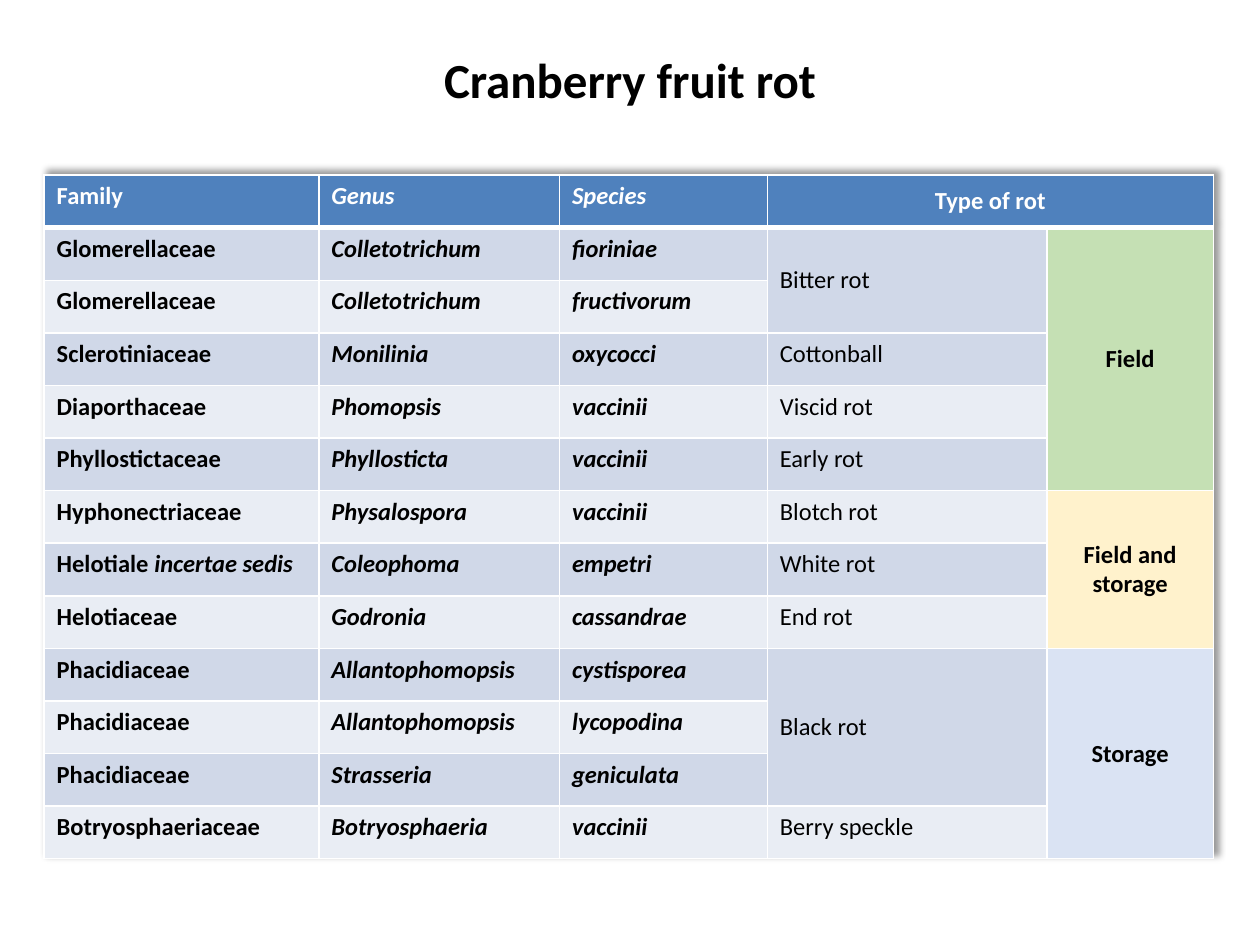
from dataclasses import dataclass

from lxml import etree
from pptx import Presentation
from pptx.dml.color import RGBColor
from pptx.enum.text import MSO_ANCHOR, PP_ALIGN
from pptx.oxml.ns import qn
from pptx.util import Inches, Pt

CENTER, LEFT = PP_ALIGN.CENTER, PP_ALIGN.LEFT
TOP, MIDDLE = MSO_ANCHOR.TOP, MSO_ANCHOR.MIDDLE


@dataclass(frozen=True)
class Theme:
    font: str = "Calibri"
    title_size: int = 28
    table_size: int = 14
    text: str = "000000"
    header_text: str = "FFFFFF"
    header_fill: str = "4F81BD"
    bands: tuple = ("D0D8E8", "E9EDF4")
    border: str = "FFFFFF"
    thin: int = 1
    thick: int = 3


THEME = Theme()
COLUMN_WIDTHS = (2.18, 1.91, 1.65, 2.22, 1.32)
TABLE_HEIGHT = 5.43
HEADERS = ("Family", "Genus", "Species", "Type of rot")
ROT_COLUMN, STAGE_COLUMN = 3, 4

# Family, genus, species; an italic ending of the family follows "|"
FUNGI = (
    ("Glomerellaceae", "Colletotrichum", "fioriniae"),
    ("Glomerellaceae", "Colletotrichum", "fructivorum"),
    ("Sclerotiniaceae", "Monilinia", "oxycocci"),
    ("Diaporthaceae", "Phomopsis", "vaccinii"),
    ("Phyllostictaceae", "Phyllosticta", "vaccinii"),
    ("Hyphonectriaceae", "Physalospora", "vaccinii"),
    ("Helotiale |incertae sedis", "Coleophoma", "empetri"),
    ("Helotiaceae", "Godronia", "cassandrae"),
    ("Phacidiaceae", "Allantophomopsis", "cystisporea"),
    ("Phacidiaceae", "Allantophomopsis", "lycopodina"),
    ("Phacidiaceae", "Strasseria", "geniculata"),
    ("Botryosphaeriaceae", "Botryosphaeria", "vaccinii"),
)

# Label and number of rows covered
ROTS = (("Bitter rot", 2), ("Cottonball", 1), ("Viscid rot", 1), ("Early rot", 1),
        ("Blotch rot", 1), ("White rot", 1), ("End rot", 1), ("Black rot", 3),
        ("Berry speckle", 1))
# Label, number of rows covered and fill
STAGES = (("Field", 5, "C5E0B4"), ("Field and storage", 3, "FFF2CC"),
          ("Storage", 4, "DAE3F3"))


def format_run(run, size, color, bold=True, italic=False):
    font = run.font
    font.name, font.size = THEME.font, Pt(size)
    font.bold, font.italic = bold, italic
    font.color.rgb = RGBColor.from_string(color)


def add_title(slide, text):
    box = slide.shapes.add_textbox(Inches(0.69), Inches(0.4), Inches(8.62), Inches(1.45))
    frame = box.text_frame
    frame.word_wrap = True
    frame.vertical_anchor = TOP
    frame.text = text
    paragraph = frame.paragraphs[0]
    paragraph.alignment = CENTER
    paragraph.line_spacing = 0.9
    format_run(paragraph.runs[0], THEME.title_size, THEME.text)


def fill_cell(cell, color):
    cell.fill.solid()
    cell.fill.fore_color.rgb = RGBColor.from_string(color)


def write_cell(cell, text, color=THEME.text, bold=True, italic=False,
               alignment=LEFT, anchor=TOP):
    main_text, _, italic_text = text.partition("|")
    cell.vertical_anchor = anchor
    cell.text_frame.text = main_text
    paragraph = cell.text_frame.paragraphs[0]
    paragraph.alignment = alignment
    format_run(paragraph.runs[0], THEME.table_size, color, bold, italic)
    if italic_text:
        run = paragraph.add_run()
        run.text = italic_text
        format_run(run, THEME.table_size, color, bold, True)


def add_solid_color(parent, color):
    fill = etree.SubElement(parent, qn("a:solidFill"))
    etree.SubElement(fill, qn("a:srgbClr"), val=color)


def set_borders(cell, top, bottom):
    """Put the four border lines ahead of the cell's fill."""
    properties = cell._tc.get_or_add_tcPr()
    widths = (("a:lnL", THEME.thin), ("a:lnR", THEME.thin), ("a:lnT", top), ("a:lnB", bottom))
    for position, (tag, width) in enumerate(widths):
        line = etree.Element(qn(tag), w=str(Pt(width)))
        add_solid_color(line, THEME.border)
        properties.insert(position, line)


def add_table_shadow(table):
    effects = etree.Element(qn("a:effectLst"))
    shadow = etree.SubElement(effects, qn("a:outerShdw"), blurRad=str(Pt(4)),
                              dist=str(Pt(3)), dir="18900000", algn="bl", rotWithShape="0")
    color = etree.SubElement(shadow, qn("a:srgbClr"), val="000000")
    etree.SubElement(color, qn("a:alpha"), val="40000")
    table._tbl.tblPr.insert(0, effects)


def add_table(slide):
    row_count = len(FUNGI) + 1
    table = slide.shapes.add_table(
        row_count, len(COLUMN_WIDTHS), Inches(0.35), Inches(1.39),
        Inches(sum(COLUMN_WIDTHS)), Inches(TABLE_HEIGHT)).table
    for column, width in zip(table.columns, COLUMN_WIDTHS):
        column.width = Inches(width)
    for index, row in enumerate(table.rows):
        row.height = Inches(TABLE_HEIGHT / row_count)
        color = THEME.bands[(index - 1) % 2] if index else THEME.header_fill
        for cell in row.cells:
            fill_cell(cell, color)
            set_borders(cell, THEME.thick if index == 1 else THEME.thin,
                        THEME.thick if index == 0 else THEME.thin)
    add_table_shadow(table)
    return table


def fill_header(table):
    for column, text in enumerate(HEADERS):
        is_rot = column == ROT_COLUMN
        write_cell(table.cell(0, column), text, THEME.header_text,
                   italic=column in (1, 2), alignment=CENTER if is_rot else LEFT,
                   anchor=MIDDLE if is_rot else TOP)
    table.cell(0, ROT_COLUMN).merge(table.cell(0, STAGE_COLUMN))


def merge_rows(table, row, column, count):
    cell = table.cell(row, column)
    if count > 1:
        cell.merge(table.cell(row + count - 1, column))
    return cell


def fill_body(table):
    for row, names in enumerate(FUNGI, start=1):
        for column, name in enumerate(names):
            write_cell(table.cell(row, column), name, italic=column > 0)

    # Rot names span the fungi that cause them
    row = 1
    for name, count in ROTS:
        cell = merge_rows(table, row, ROT_COLUMN, count)
        write_cell(cell, name, bold=False, anchor=MIDDLE if count > 1 else TOP)
        row += count

    # Coloured stages span groups of rots
    row = 1
    for name, count, color in STAGES:
        cell = merge_rows(table, row, STAGE_COLUMN, count)
        fill_cell(cell, color)
        write_cell(cell, name, alignment=CENTER, anchor=MIDDLE)
        row += count


def main():
    presentation = Presentation()
    presentation.slide_width, presentation.slide_height = Inches(10), Inches(7.5)
    slide = presentation.slides.add_slide(presentation.slide_layouts[6])
    add_title(slide, "Cranberry fruit rot")
    table = add_table(slide)
    fill_header(table)
    fill_body(table)
    presentation.save("out.pptx")


if __name__ == "__main__":
    main()
